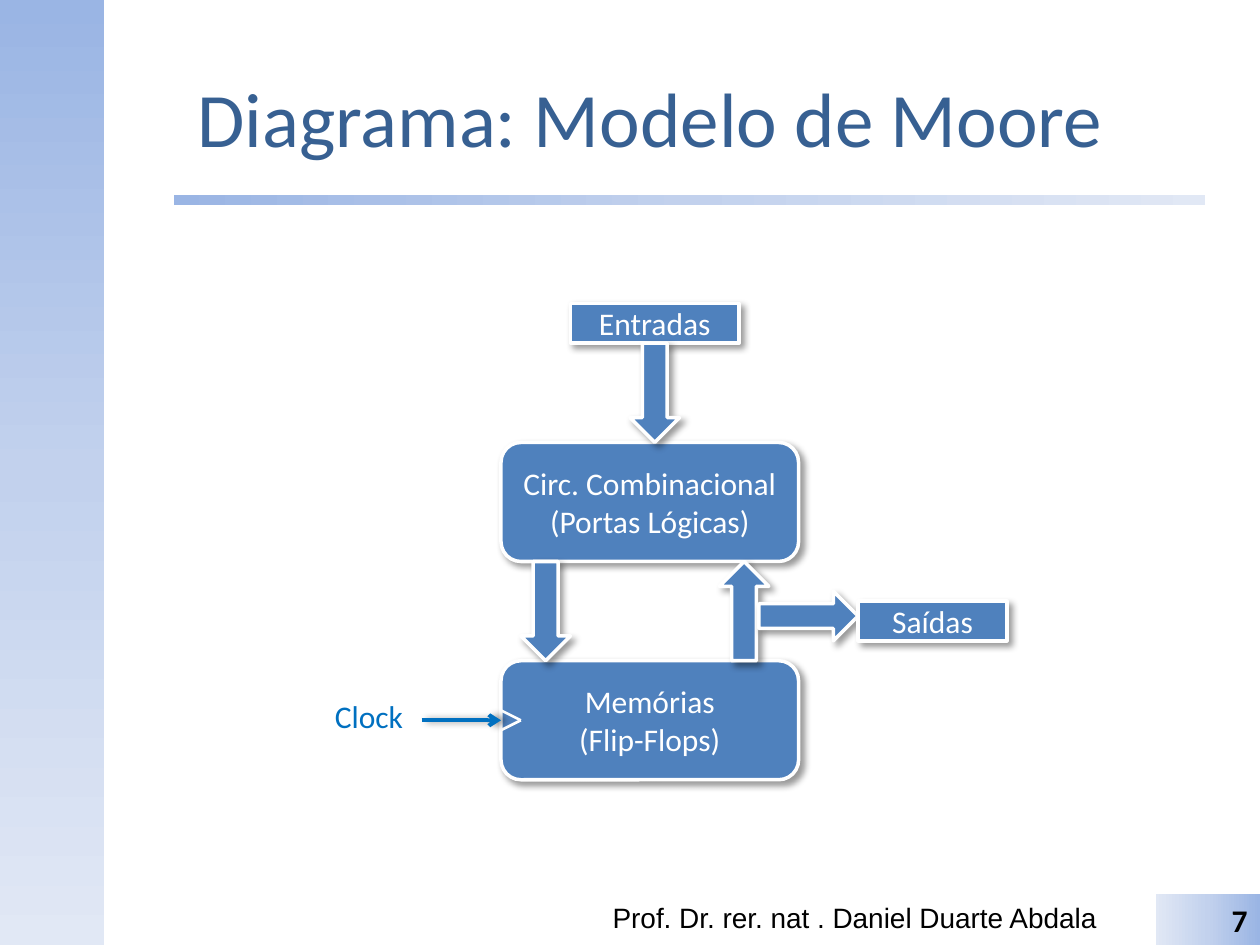
from lxml.etree import SubElement
from pptx import Presentation
from pptx.dml.color import RGBColor
from pptx.enum.shapes import MSO_CONNECTOR, MSO_SHAPE as SHAPE
from pptx.enum.text import MSO_ANCHOR as ANCHOR, PP_ALIGN as ALIGN
from pptx.oxml import parse_xml
from pptx.oxml.ns import nsdecls, qn
from pptx.util import Cm, Pt

BLUE, WHITE, CLOCK = "4F81BD", "FFFFFF", "0070C0"
GRADIENT = [(0, "9AB5E4"), (50, "C2D1ED"), (100, "E1E8F5")]

BOX_X, BOX_W, BOX_H = 10.1, 6, 2.4
ARROW_W, ARROW_L = 1, 2
LABEL_H = 0.8
IN_Y = 6.12
COMB_Y = IN_Y + LABEL_H + ARROW_L
LINK_Y = COMB_Y + BOX_H
MEM_Y = LINK_Y + ARROW_L
CLOCK_Y = MEM_Y + BOX_H / 2

BLOCKS = [
    (SHAPE.ROUNDED_RECTANGLE, BOX_X, COMB_Y, BOX_W, BOX_H,
     ["Circ. Combinacional", "(Portas Lógicas)"]),
    (SHAPE.ROUNDED_RECTANGLE, BOX_X, MEM_Y, BOX_W, BOX_H,
     ["Memórias", "(Flip-Flops)"]),
    (SHAPE.DOWN_ARROW, 10.5, LINK_Y, ARROW_W, ARROW_L, []),
    (SHAPE.RECTANGLE, 11.5, IN_Y, 3.4, LABEL_H, ["Entradas"]),
    (SHAPE.DOWN_ARROW, 12.7, IN_Y + LABEL_H, ARROW_W, ARROW_L, []),
    (SHAPE.UP_ARROW, 14.5, LINK_Y, ARROW_W, ARROW_L, []),
    (SHAPE.RIGHT_ARROW, 15.3, LINK_Y + 0.6, ARROW_L, ARROW_W, []),
    (SHAPE.RECTANGLE, 17.3, LINK_Y + 0.8, 3, LABEL_H, ["Saídas"]),
]


def color(value):
    return RGBColor.from_string(value)


def write(sp, lines, size=18, font="Calibri", fill=WHITE, bold=False,
          align=ALIGN.CENTER, anchor=ANCHOR.MIDDLE, wrap=True):
    tf = sp.text_frame
    tf.word_wrap = wrap
    tf.vertical_anchor = anchor
    for i, line in enumerate(lines):
        p = tf.add_paragraph() if i else tf.paragraphs[0]
        p.alignment = align
        r = p.add_run()
        r.text = line
        r.font.size, r.font.name, r.font.bold = Pt(size), font, bold
        r.font.color.rgb = color(fill)


def add_shadow(sp, angle=45):
    sp_pr = sp._element.spPr
    for old in sp_pr.findall(qn("a:effectLst")):
        sp_pr.remove(old)
    sp_pr.append(parse_xml(
        f'<a:effectLst {nsdecls("a")}><a:outerShdw blurRad="50800" dist="38100" '
        f'dir="{angle * 60000}" algn="tl" rotWithShape="0"><a:srgbClr val="000000">'
        '<a:alpha val="40000"/></a:srgbClr></a:outerShdw></a:effectLst>'))


def add_shape(slide, kind, x, y, w, h):
    sp = slide.shapes.add_shape(kind, Cm(x), Cm(y), Cm(w), Cm(h))
    sp.shadow.inherit = False
    return sp


def add_band(slide, x, y, w, h, angle):
    sp = add_shape(slide, SHAPE.RECTANGLE, x, y, w, h)
    sp.line.fill.background()
    stops = "".join(f'<a:gs pos="{pos * 1000}"><a:srgbClr val="{c}"/></a:gs>'
                    for pos, c in GRADIENT)
    sp._element.spPr.find(qn("a:prstGeom")).addnext(parse_xml(
        f'<a:gradFill {nsdecls("a")} rotWithShape="1"><a:gsLst>{stops}</a:gsLst>'
        f'<a:lin ang="{angle * 60000}" scaled="0"/></a:gradFill>'))
    return sp


def add_block(slide, kind, x, y, w, h, lines):
    sp = add_shape(slide, kind, x, y, w, h)
    sp.fill.solid()
    sp.fill.fore_color.rgb = color(BLUE)
    sp.line.color.rgb = color(WHITE)
    sp.line.width = Pt(2)
    add_shadow(sp)
    write(sp, lines)
    return sp


def add_line(slide, x1, y1, x2, y2, stroke, width):
    cx = slide.shapes.add_connector(MSO_CONNECTOR.STRAIGHT,
                                    Cm(x1), Cm(y1), Cm(x2), Cm(y2))
    cx.line.color.rgb = color(stroke)
    cx.line.width = Pt(width)
    SubElement(cx._element.spPr, qn("a:effectLst"))
    return cx


def add_text(slide, x, y, w, h, text, **fmt):
    sp = slide.shapes.add_textbox(Cm(x), Cm(y), Cm(w), Cm(h))
    write(sp, [text], align=ALIGN.LEFT, anchor=ANCHOR.TOP, **fmt)


def main():
    prs = Presentation()
    prs.slide_width, prs.slide_height = Cm(25.4), Cm(19.05)
    slide = prs.slides.add_slide(prs.slide_layouts[5])

    add_band(slide, 0, 0, 2.1, 19.05, 90)
    add_band(slide, 3.5, 3.94, 20.8, 0.2, 0)
    title = slide.shapes.title
    title.left, title.top, title.width, title.height = Cm(2.1), Cm(0.76), Cm(22.02), Cm(3.18)
    write(title, ["Diagrama: Modelo de Moore"], size=44, fill="376092")

    add_text(slide, 12.1, 18.03, 10.64, 1.02, "Prof. Dr. rer. nat . Daniel Duarte Abdala",
             size=16, font="Arial", fill="000000")
    number = add_band(slide, 23.3, 18.03, 2.1, 1.02, 180)
    write(number, ["7"], fill="000000", bold=True, align=ALIGN.RIGHT, anchor=ANCHOR.TOP)

    blocks = [add_block(slide, *block) for block in BLOCKS]
    memory = blocks[1]

    for dy in (-0.2, 0.2):
        add_line(slide, BOX_X, CLOCK_Y + dy, BOX_X + 0.4, CLOCK_Y, WHITE, 1.5)
    clock = add_line(slide, 8.5, CLOCK_Y, BOX_X, CLOCK_Y, CLOCK, 2.25)
    clock.end_connect(memory, 1)
    SubElement(clock.line._get_or_add_ln(), qn("a:tailEnd"), type="arrow")
    add_shadow(clock, 0)
    add_text(slide, 6.5, 13.92, 1.9, 1.02, "Clock", fill=CLOCK, wrap=False)

    prs.save("out.pptx")


if __name__ == "__main__":
    main()
